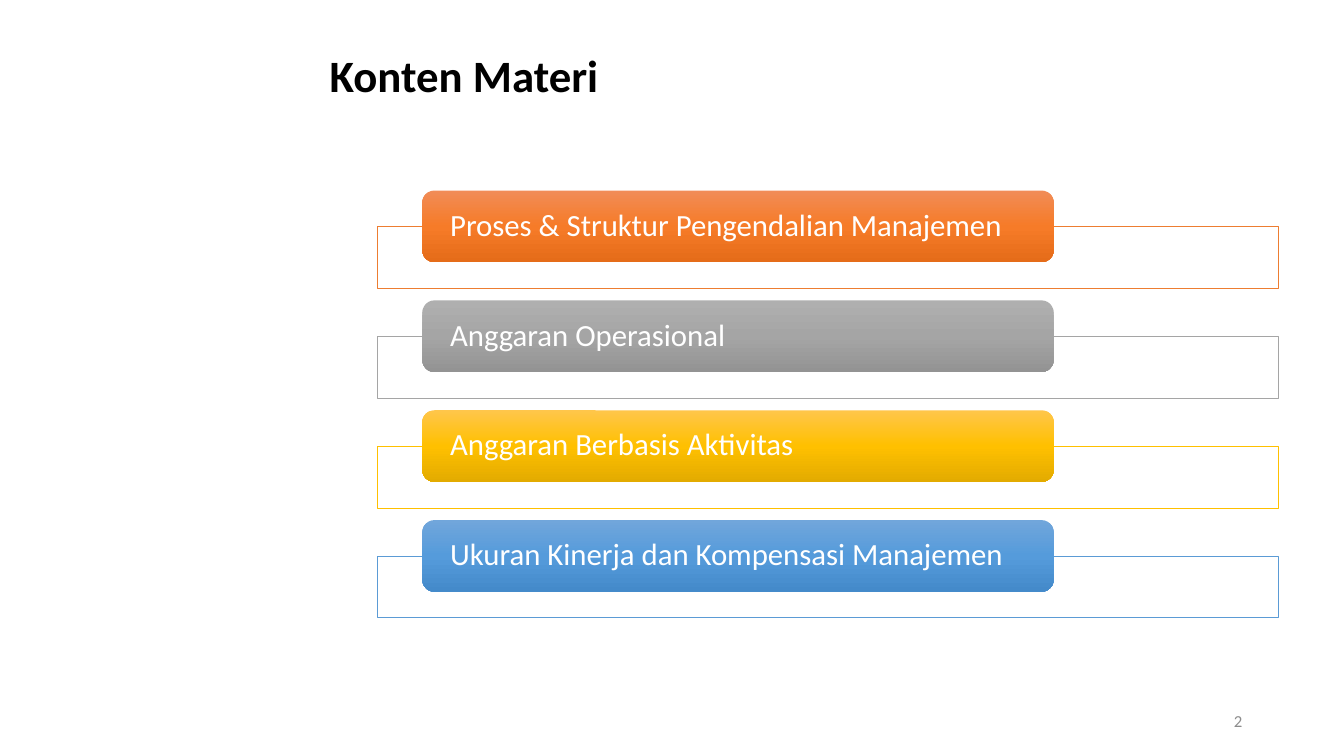
from copy import deepcopy

from lxml.etree import SubElement
from pptx import Presentation
from pptx.dml.color import RGBColor
from pptx.enum.shapes import MSO_SHAPE as Shape
from pptx.enum.text import MSO_ANCHOR as Anchor, PP_ALIGN as Align
from pptx.oxml.ns import qn
from pptx.util import Inches, Pt

WHITE = RGBColor(0xFF, 0xFF, 0xFF)
BLACK = RGBColor(0, 0, 0)
GRAY = RGBColor(0x8C, 0x8C, 0x8C)
ORANGE = RGBColor(0xED, 0x7D, 0x31)
SILVER = RGBColor(0xA5, 0xA5, 0xA5)
GOLD = RGBColor(0xFF, 0xC0, 0x00)
BLUE = RGBColor(0x5B, 0x9B, 0xD5)
ORANGE_SHADES = (RGBColor(0xF1, 0x8C, 0x57), RGBColor(0xF6, 0x7B, 0x28), RGBColor(0xE5, 0x6C, 0x19))
SILVER_SHADES = (RGBColor(0xAF, 0xAF, 0xAF), SILVER, RGBColor(0x93, 0x93, 0x93))
GOLD_SHADES = (RGBColor(0xFF, 0xC6, 0x4B), GOLD, RGBColor(0xE3, 0xAB, 0x00))
BLUE_SHADES = (RGBColor(0x71, 0xA6, 0xDB), RGBColor(0x55, 0x9B, 0xDB), RGBColor(0x44, 0x8A, 0xCA))

TOPICS = [
    ("Proses & Struktur Pengendalian Manajemen", ORANGE, ORANGE_SHADES),
    ("Anggaran Operasional", SILVER, SILVER_SHADES),
    ("Anggaran Berbasis Aktivitas", GOLD, GOLD_SHADES),
    ("Ukuran Kinerja dan Kompensasi Manajemen", BLUE, BLUE_SHADES),
]
FIRST_TOP = 1.89
TOPIC_STEP = 1.09
FRAME_DROP = 0.36


def set_attributes(target, values):
    for name, value in values.items():
        setattr(target, name, value)


def write(shape, text, size, color, bold=False, paragraph_format=None, **frame_format):
    frame = shape.text_frame
    set_attributes(frame, {"word_wrap": True, **frame_format})
    paragraph = frame.paragraphs[0]
    set_attributes(paragraph, {"alignment": Align.LEFT, **(paragraph_format or {})})
    run = paragraph.add_run()
    run.text = text
    set_attributes(run.font, {"name": "Calibri", "size": Pt(size), "bold": bold})
    run.font.color.rgb = color


def add_text(slide, box, *content, **formats):
    write(slide.shapes.add_textbox(*map(Inches, box)), *content, **formats)


def add_shape(slide, kind, box):
    shape = slide.shapes.add_shape(kind, *map(Inches, box))
    shape.shadow.inherit = False
    return shape


def add_frame(slide, top, color):
    """Add the outlined, slightly transparent box behind a topic."""
    frame = add_shape(slide, Shape.RECTANGLE, (3.74, top, 8.94, 0.61))
    frame.fill.solid()
    frame.fill.fore_color.rgb = WHITE
    white = frame._element.spPr.find(f"{qn('a:solidFill')}/{qn('a:srgbClr')}")
    SubElement(white, qn("a:alpha"), val="90000")
    frame.line.color.rgb = color
    frame.line.width = Pt(0.5)


def fill_gradient(shape, shades):
    """Fill from top to bottom with evenly spaced shades."""
    shape.fill.gradient()
    shape.fill.gradient_angle = 270
    stop_list = shape._element.spPr.find(f"{qn('a:gradFill')}/{qn('a:gsLst')}")
    stop_list.append(deepcopy(stop_list[-1]))
    for index, (stop, shade) in enumerate(zip(shape.fill.gradient_stops, shades)):
        stop.position = index / (len(shades) - 1)
        stop.color.rgb = shade


def add_topic(slide, top, title, color, shades):
    add_frame(slide, top + FRAME_DROP, color)
    bar = add_shape(slide, Shape.ROUNDED_RECTANGLE, (4.19, top, 6.26, 0.71))
    fill_gradient(bar, shades)
    bar.line.fill.background()
    write(bar, title, 22, WHITE, paragraph_format={"line_spacing": 0.9},
          vertical_anchor=Anchor.MIDDLE, margin_left=Inches(0.24),
          margin_right=Inches(0.24), margin_top=0, margin_bottom=0)


def main():
    deck = Presentation()
    deck.slide_width, deck.slide_height = Inches(13.33), Inches(7.5)
    slide = deck.slides.add_slide(deck.slide_layouts[6])
    add_text(slide, (9.42, 6.95, 3, 0.4), "2", 12, GRAY,
             paragraph_format={"alignment": Align.RIGHT}, vertical_anchor=Anchor.MIDDLE)
    for index, topic in enumerate(TOPICS):
        add_topic(slide, FIRST_TOP + index * TOPIC_STEP, *topic)
    add_text(slide, (3.17, 0.42, 3.01, 0.64), "Konten Materi", 32, BLACK, bold=True)
    deck.save("out.pptx")


if __name__ == "__main__":
    main()
